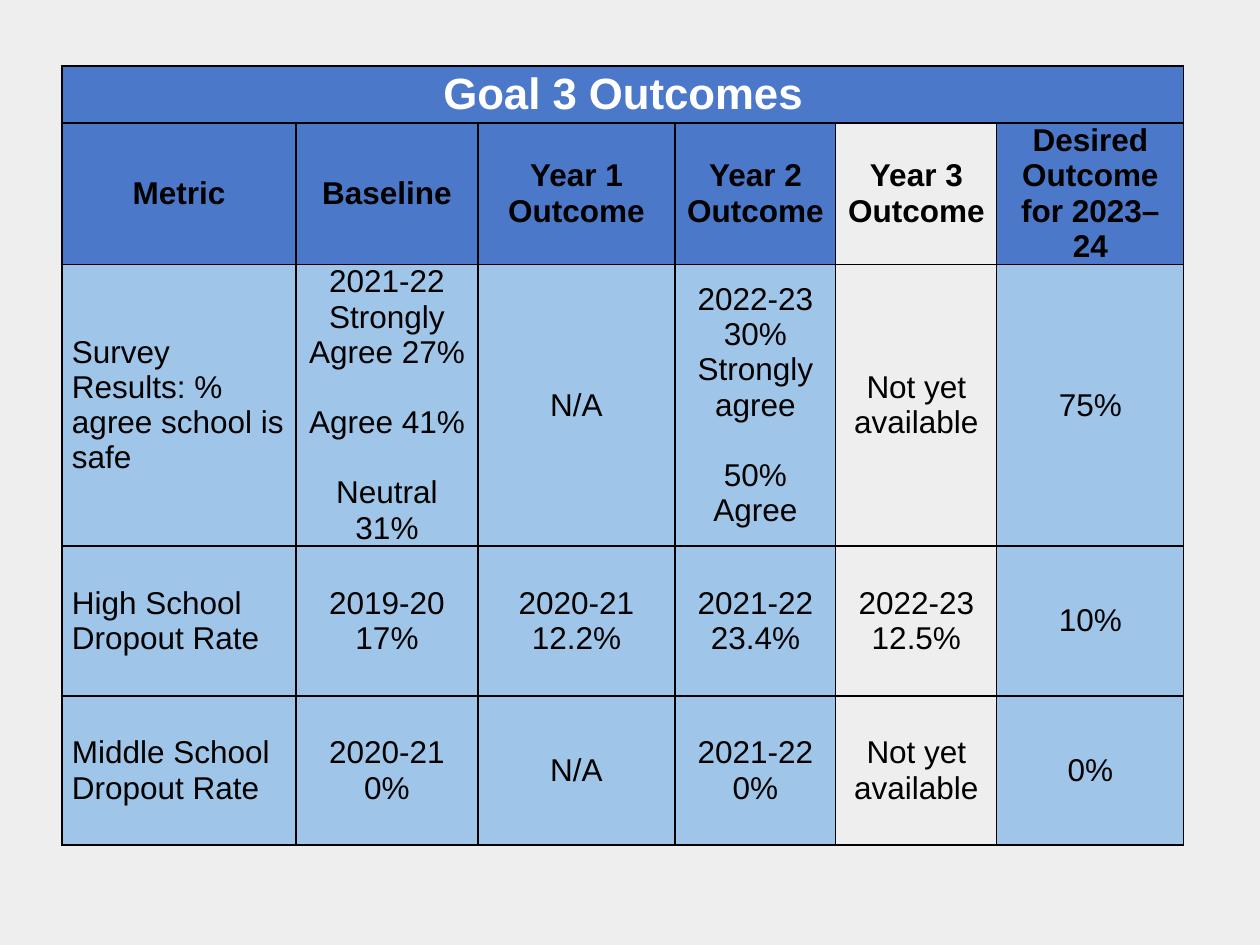
from lxml import etree
from pptx import Presentation
from pptx import util as u
from pptx.dml.color import RGBColor
from pptx.enum import text
from pptx.oxml import ns

PX = 914400 / 126
COLORS = {
    "ground": "EEEEEE",
    "header": "4B78C8",
    "body": "9FC5E8",
    "ink": "000000",
    "title": "FFFFFF",
}
COLUMN_WIDTHS = [234, 182, 197, 161, 161, 187]
ROW_HEIGHTS = [57, 141, 282, 150, 149]
YEAR_3 = 4
ROWS = [
    ["Goal 3 Outcomes", "", "", "", "", ""],
    ["Metric", "Baseline", "Year 1 Outcome", "Year 2 Outcome", "Year 3 Outcome",
     "Desired Outcome for 2023–24"],
    ["Survey Results: % agree school is safe",
     "2021-22\nStrongly Agree 27%\n\nAgree 41%\n\nNeutral 31%", "N/A",
     "2022-23\n30% Strongly agree\n\n50% Agree", "Not yet available", "75%"],
    ["High School Dropout Rate", "2019-20\n17%", "2020-21\n12.2%", "2021-22\n23.4%",
     "2022-23\n12.5%", "10%"],
    ["Middle School Dropout Rate", "2020-21\n0%", "N/A", "2021-22\n0%",
     "Not yet available", "0%"],
]


def px(length):
    return u.Emu(round(length * PX))


def write(frame, words, size=18, bold=False, color="ink", align=text.PP_ALIGN.CENTER):
    para = frame.paragraphs[0]
    for block_index, block in enumerate(words.split("\n\n")):
        for line_index, line in enumerate(block.split("\n")):
            if block_index or line_index:
                para = frame.add_paragraph()
            para.alignment = align
            if block_index and not line_index:
                para.space_before = u.Pt(20)
            span = para.add_run()
            span.text = line
            span.font.name = "Arial"
            span.font.size = u.Pt(size)
            span.font.bold = bold
            span.font.color.rgb = RGBColor.from_string(COLORS[color])


deck = Presentation()
deck.slide_width, deck.slide_height = px(1260), px(945)
page = deck.slides.add_slide(deck.slide_layouts[6])
page.background.fill.solid()
page.background.fill.fore_color.rgb = RGBColor.from_string(COLORS["ground"])

table = page.shapes.add_table(
    len(ROWS), len(COLUMN_WIDTHS), px(62), px(66),
    px(sum(COLUMN_WIDTHS)), px(sum(ROW_HEIGHTS)),
).table
table.first_row = table.horz_banding = False
for column, width in zip(table.columns, COLUMN_WIDTHS):
    column.width = px(width)
for row, height in zip(table.rows, ROW_HEIGHTS):
    row.height = px(height)
table.cell(0, 0).merge(table.cell(0, len(COLUMN_WIDTHS) - 1))

for row_index, row in enumerate(ROWS):
    for column_index, words in enumerate(row):
        cell = table.cell(row_index, column_index)
        cell.vertical_anchor = text.MSO_ANCHOR.MIDDLE
        cell.margin_left = cell.margin_right = px(10)
        cell.margin_top = cell.margin_bottom = 0

        properties = cell._tc.get_or_add_tcPr()
        for side in ("lnL", "lnR", "lnT", "lnB"):
            border = etree.SubElement(properties, ns.qn(f"a:{side}"), w=str(u.Pt(0.75)))
            paint = etree.SubElement(border, ns.qn("a:solidFill"))
            etree.SubElement(paint, ns.qn("a:srgbClr"), val=COLORS["ink"])

        fill = "header" if row_index < 2 else "body"
        if row_index and column_index == YEAR_3:
            fill = "ground"
        cell.fill.solid()
        cell.fill.fore_color.rgb = RGBColor.from_string(COLORS[fill])

        if row_index == 0 and words:
            write(cell.text_frame, words, size=25, bold=True, color="title")
        elif row_index == 1:
            write(cell.text_frame, words, bold=True)
        elif words:
            left = column_index == 0
            write(cell.text_frame, words,
                  align=text.PP_ALIGN.LEFT if left else text.PP_ALIGN.CENTER)

deck.save("out.pptx")
